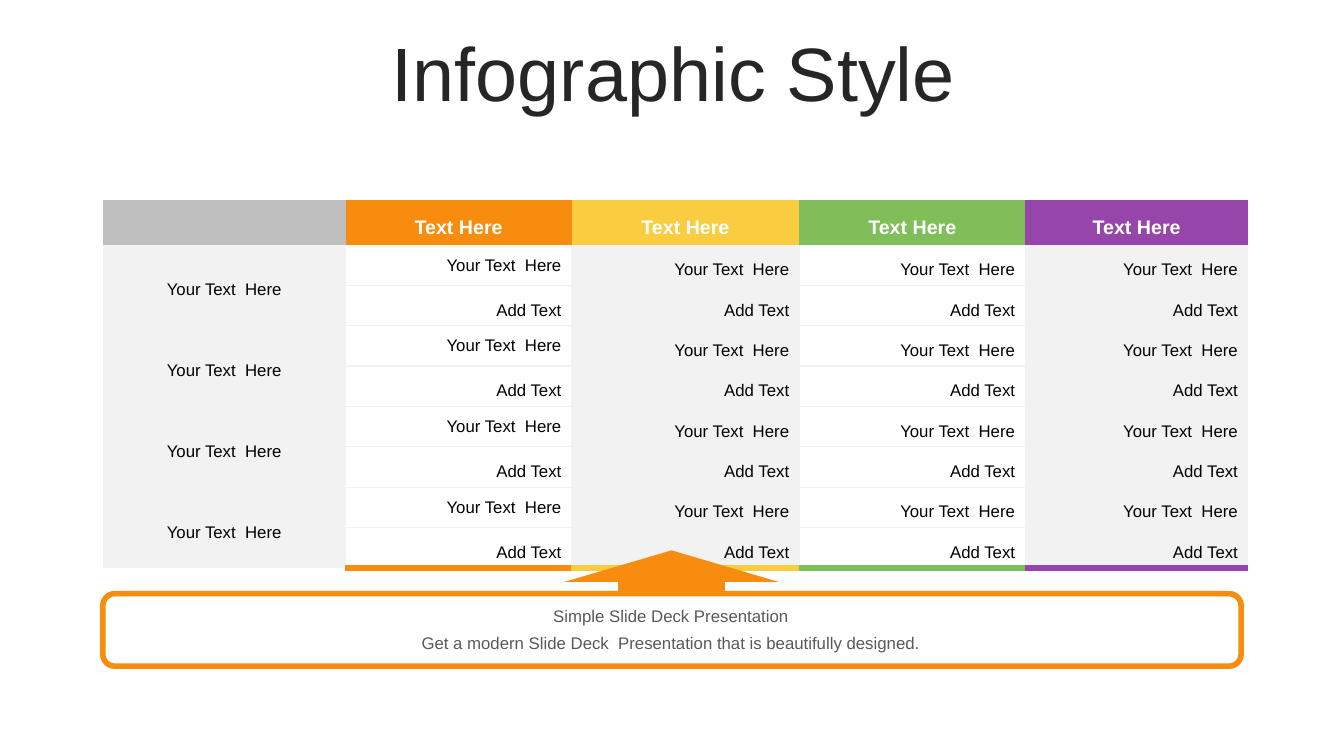
from dataclasses import dataclass

from lxml import etree
from pptx import Presentation
from pptx.dml.color import RGBColor
from pptx.enum.shapes import MSO_SHAPE
from pptx.enum.text import MSO_ANCHOR, MSO_AUTO_SIZE, PP_ALIGN
from pptx.oxml.ns import qn
from pptx.util import Inches, Pt

CENTER, RIGHT = PP_ALIGN.CENTER, PP_ALIGN.RIGHT
MIDDLE, TOP = MSO_ANCHOR.MIDDLE, MSO_ANCHOR.TOP
GROW = MSO_AUTO_SIZE.SHAPE_TO_FIT_TEXT
ROUND_RECT, UP_ARROW = MSO_SHAPE.ROUNDED_RECTANGLE, MSO_SHAPE.UP_ARROW

WHITE = RGBColor(0xFF, 0xFF, 0xFF)
BLACK = RGBColor(0x00, 0x00, 0x00)
INK = RGBColor(0x26, 0x26, 0x26)
SLATE = RGBColor(0x59, 0x59, 0x59)
PALE = RGBColor(0xF2, 0xF2, 0xF2)
GRAY = RGBColor(0xBF, 0xBF, 0xBF)
ORANGE = RGBColor(0xF7, 0x8C, 0x0E)
YELLOW = RGBColor(0xF9, 0xCD, 0x3F)
GREEN = RGBColor(0x80, 0xBE, 0x5A)
PURPLE = RGBColor(0x96, 0x46, 0xAA)

COLUMN_COLORS = [GRAY, ORANGE, YELLOW, GREEN, PURPLE]
COLUMN_SHARES = [21.21, 19.72, 19.89, 19.72, 19.46]
HEADER_SHARE = 12.9
GROUPS = 4
BODY_ROWS = 2 * GROUPS

TITLE_FONT = {"name": "Arial", "size": Pt(54)}
HEADER_FONT = {"name": "Arial", "size": Pt(14), "bold": True}
BODY_FONT = {"name": "Arial", "size": Pt(12), "bold": False}
SPACED = {"line_spacing": 1.5}


@dataclass
class Box:
    left: int
    top: int
    width: int
    height: int

    def inner(self, left, top, width, height):
        return Box(
            int(self.left + self.width * left / 100),
            int(self.top + self.height * top / 100),
            int(self.width * width / 100),
            int(self.height * height / 100),
        )

    def place(self):
        return self.left, self.top, self.width, self.height


def apply(target, values):
    for key, value in values.items():
        setattr(target, key, value)


def write(frame, text, font, color, paragraph_format):
    paragraph = frame.paragraphs[0]
    apply(paragraph, paragraph_format)
    run = paragraph.add_run()
    run.text = text
    apply(run.font, font)
    run.font.color.rgb = color


def add_label(slide, box, text, font, color, paragraph_format, frame_format):
    frame = slide.shapes.add_textbox(*box.place()).text_frame
    apply(frame, {"word_wrap": True, **frame_format})
    write(frame, text, font, color, {"alignment": CENTER, **paragraph_format})


def set_borders(cell, borders):
    properties = cell._tc.get_or_add_tcPr()
    for side in "LRTB":
        color, points = borders.get(side, (None, 0))
        line = etree.SubElement(properties, qn(f"a:ln{side}"), w=str(int(Pt(points))))
        if color is None:
            etree.SubElement(line, qn("a:noFill"))
        else:
            fill = etree.SubElement(line, qn("a:solidFill"))
            etree.SubElement(fill, qn("a:srgbClr"), val=str(color))


def paint_cell(cell, color, borders):
    set_borders(cell, borders)
    cell.fill.solid()
    cell.fill.fore_color.rgb = color
    cell.vertical_anchor = MIDDLE


def body_borders(row, column):
    thin = (PALE, 1)
    borders = {"B": (COLUMN_COLORS[column], 4.5) if row == BODY_ROWS else thin}
    if row > 1:
        borders["T"] = thin
    if column > 0:
        borders["L"] = thin
    if column < len(COLUMN_COLORS) - 1:
        borders["R"] = thin
    return borders


def add_title(slide, box):
    add_label(slide, box, "Infographic Style", TITLE_FONT, INK,
              {"line_spacing": 0.9, "space_before": Pt(10)},
              {"vertical_anchor": MIDDLE})


def add_comparison_table(slide, box):
    table = slide.shapes.add_table(
        BODY_ROWS + 1, len(COLUMN_COLORS), *box.place()).table
    for column, share in zip(table.columns, COLUMN_SHARES):
        column.width = int(box.width * share / 100)
    row_shares = [HEADER_SHARE] + [(100 - HEADER_SHARE) / BODY_ROWS] * BODY_ROWS
    for row, share in zip(table.rows, row_shares):
        row.height = int(box.height * share / 100)

    for column, color in enumerate(COLUMN_COLORS):
        header = table.cell(0, column)
        paint_cell(header, color, {})
        if column > 0:
            write(header.text_frame, "Text Here", HEADER_FONT, WHITE,
                  {"alignment": CENTER, **SPACED})
        for row in range(1, BODY_ROWS + 1):
            cell = table.cell(row, column)
            paint_cell(cell, WHITE if column % 2 else PALE, body_borders(row, column))
            opens_group = row % 2 == 1
            if column == 0 and not opens_group:
                continue
            if column == 0:
                cell.merge(table.cell(row + 1, 0))
            write(cell.text_frame,
                  "Your Text  Here" if opens_group else "Add Text",
                  BODY_FONT, BLACK,
                  {"alignment": RIGHT if column else CENTER,
                   "line_spacing": 1.0 if column == 1 and opens_group else 1.5})


def add_callout(slide, box):
    frame = slide.shapes.add_shape(ROUND_RECT, *box.inner(0, 37.39, 100, 62.61).place())
    arrow = slide.shapes.add_shape(UP_ARROW, *box.inner(40.57, 0, 18.78, 38.26).place())
    for shape, color in ((frame, WHITE), (arrow, ORANGE)):
        shape.shadow.inherit = False
        shape.fill.solid()
        shape.fill.fore_color.rgb = color
    frame.line.color.rgb = ORANGE
    frame.line.width = Pt(4)
    arrow.line.fill.background()
    arrow.adjustments[0] = 0.5
    arrow.adjustments[1] = 0.71
    sentences = [
        (43.48, "Simple Slide Deck Presentation"),
        (66.96, "Get a modern Slide Deck  Presentation that is beautifully designed."),
    ]
    for top, sentence in sentences:
        add_label(slide, box.inner(6.11, top, 87.6, 26.09), sentence, BODY_FONT, SLATE,
                  {}, {"vertical_anchor": TOP, "auto_size": GROW})


def main():
    deck = Presentation()
    deck.slide_width, deck.slide_height = Inches(13.33), Inches(7.5)
    slide = deck.slides.add_slide(deck.slide_layouts[6])
    page = Box(0, 0, deck.slide_width, deck.slide_height)
    add_title(slide, page.inner(2.63, 4.93, 94.97, 10.53))
    add_comparison_table(slide, page.inner(7.65, 26.4, 85.22, 45.47))
    add_callout(slide, page.inner(7.65, 72.8, 84.7, 15.33))
    deck.save("out.pptx")


if __name__ == "__main__":
    main()
